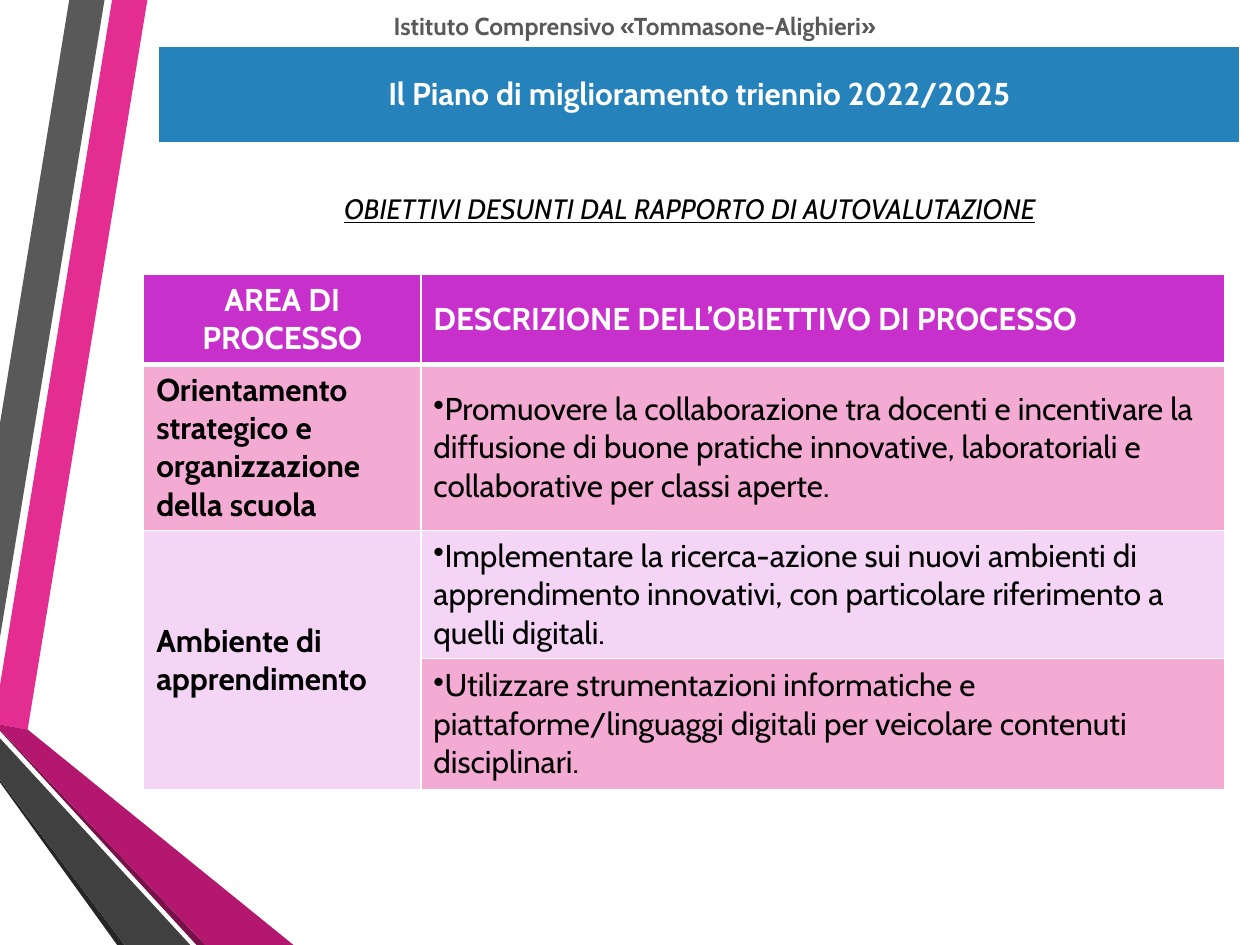
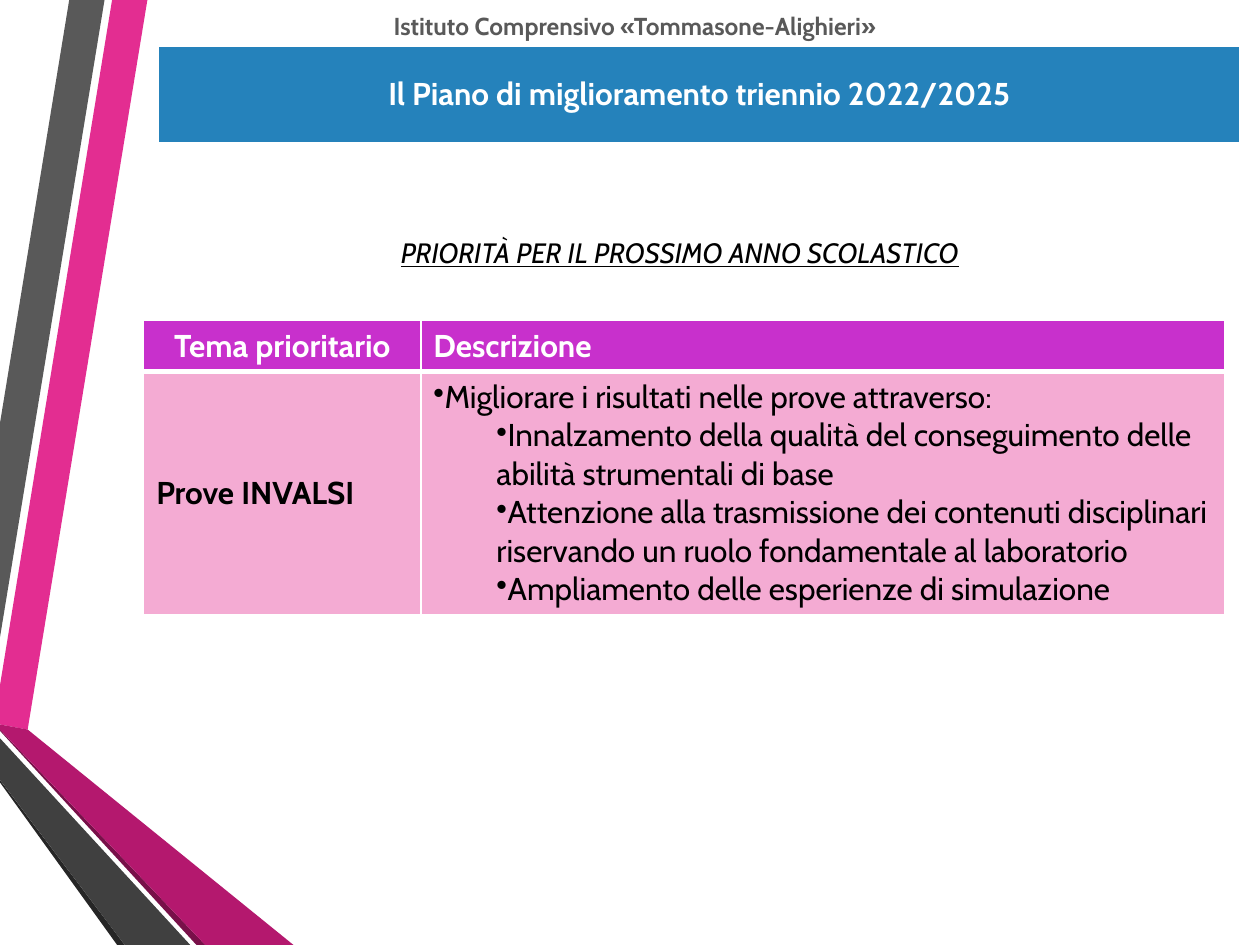
from lxml.etree import SubElement
from pptx import Presentation
from pptx.dml.color import RGBColor
from pptx.enum.text import MSO_ANCHOR as Anchor, PP_ALIGN as Align
from pptx.oxml.ns import qn
from pptx.util import Pt

PX = 9144
FONT = "Cabin"
COLORS = {
    "white": "FFFFFF", "black": "000000", "school": "595959", "banner": "2582BB",
    "header": "C830CC", "pink": "F4ABD3", "lilac": "F4D5F5",
}
RIBBONS = [
    ("E32D91", [(0, 544), (0, 575), (22, 579), (117, 0), (89, 0)]),
    ("595959", [(83, 0), (55, 0), (0, 336), (0, 506)]),
    ("262626", [(0, 619), (0, 621), (93, 750), (99, 750)]),
    ("781049", [(0, 579), (0, 580), (156, 750), (163, 750)]),
    ("B4186E", [(0, 579), (163, 750), (233, 750), (22, 579), (0, 575)]),
    ("404040", [(0, 619), (99, 750), (151, 750), (0, 586)]),
]
SCHOOL = "Istituto Comprensivo «Tommasone-Alighieri»"
PLAN = "Il Piano di miglioramento triennio 2022/2025"
SCHOOL_BOX = (114, 4, 780, 34)
BANNER_BOX = (126, 37, 858, 76)
COLUMNS = (220, 638)

PAGES = [
    {
        "heading": "OBIETTIVI DESUNTI DAL RAPPORTO DI AUTOVALUTAZIONE",
        "heading_box": (138, 147, 819, 37),
        "table_at": (114, 218),
        "heights": (69, 130, 101, 104),
        "header": ("AREA DI PROCESSO", "DESCRIZIONE DELL’OBIETTIVO DI PROCESSO"),
        "groups": [
            ("Orientamento strategico e organizzazione della scuola", [
                [(0, "Promuovere la collaborazione tra docenti e incentivare la diffusione di "
                     "buone pratiche innovative, laboratoriali e collaborative per classi aperte.")],
            ]),
            ("Ambiente di apprendimento", [
                [(0, "Implementare la ricerca-azione sui nuovi ambienti di apprendimento "
                     "innovativi, con particolare riferimento a quelli digitali.")],
                [(0, "Utilizzare strumentazioni informatiche e piattaforme/linguaggi digitali "
                     "per veicolare contenuti disciplinari.")],
            ]),
        ],
    },
    {
        "heading": "PRIORITÀ PER IL PROSSIMO ANNO SCOLASTICO",
        "heading_box": (130, 182, 819, 37),
        "table_at": (114, 254),
        "heights": (41, 190),
        "header": ("Tema prioritario", "Descrizione"),
        "groups": [
            ("Prove INVALSI", [[
                (0, "Migliorare i risultati nelle prove attraverso:"),
                (1, "Innalzamento della qualità del conseguimento delle abilità strumentali di base"),
                (1, "Attenzione alla trasmissione dei contenuti disciplinari riservando un ruolo "
                    "fondamentale al laboratorio"),
                (1, "Ampliamento delle esperienze di simulazione"),
            ]]),
        ],
    },
]


def rgb(name):
    """Return the colour of a name in the palette, or of a hex string."""
    return RGBColor.from_string(COLORS.get(name, name))


def px(lengths):
    """Turn whole pixels into EMU."""
    return [length * PX for length in lengths]


def write(para, text, size, color, align=Align.LEFT, **style):
    """Add one formatted run to a paragraph."""
    para.alignment = align
    span = para.add_run()
    span.text = text
    span.font.name, span.font.size = FONT, Pt(size)
    span.font.color.rgb = rgb(color)
    for name, value in style.items():
        setattr(span.font, name, value)


def write_bullets(frame, items):
    """Fill a cell with bulleted paragraphs, indented by level."""
    for number, (level, text) in enumerate(items):
        para = frame.add_paragraph() if number else frame.paragraphs[0]
        para.level = level
        props = para._p.get_or_add_pPr()
        props.set("marL", str(level * 50 * PX))
        props.set("indent", "0")
        SubElement(props, qn("a:buChar"), char="•")
        write(para, text, 18, "black", bold=False)


def style_cell(cell, fill, top=1, bottom=1):
    """Give a cell its white rules, fill and middle anchor."""
    props = cell._tc.get_or_add_tcPr()
    for side, width in (("L", 1), ("R", 1), ("T", top), ("B", bottom)):
        line = SubElement(props, qn(f"a:ln{side}"), w=str(Pt(width)))
        paint = SubElement(line, qn("a:solidFill"))
        SubElement(paint, qn("a:srgbClr"), val=COLORS["white"])
    cell.fill.solid()
    cell.fill.fore_color.rgb = rgb(fill)
    cell.vertical_anchor = Anchor.MIDDLE


def add_grid(page, left, top, widths, heights):
    """Add an unbanded table with the given columns and rows."""
    box = px((left, top, sum(widths), sum(heights)))
    table = page.shapes.add_table(len(heights), len(widths), *box).table
    table.first_row = table.horz_banding = False
    for column, width in zip(table.columns, px(widths)):
        column.width = width
    for row, height in zip(table.rows, px(heights)):
        row.height = height
    return table


def add_ribbons(page, layout):
    """Draw the folded ribbons and place them in the shared layout."""
    for number, (color, points) in enumerate(RIBBONS):
        builder = page.shapes.build_freeform(*points[0], scale=PX)
        builder.add_line_segments(points[1:], close=True)
        ribbon = builder.convert_to_shape()
        ribbon.shadow.inherit = False
        ribbon.fill.solid()
        ribbon.fill.fore_color.rgb = rgb(color)
        ribbon.line.fill.background()
        ribbon.element.nvSpPr.cNvPr.id = 20 + number
        layout.shapes.element.append(ribbon.element)


def add_heading(page, text, box):
    """Move and format the title placeholder."""
    title = page.shapes.title
    title.left, title.top, title.width, title.height = px(box)
    title.text_frame.word_wrap = True
    write(title.text_frame.paragraphs[0], text, 16, "black", Align.CENTER,
          italic=True, underline=True)


def add_school(page, box):
    """Add the school name above the banner."""
    frame = page.shapes.add_textbox(*px(box)).text_frame
    frame.word_wrap = True
    write(frame.paragraphs[0], SCHOOL, 14, "school", Align.CENTER, bold=True)


def add_banner(page, box):
    """Add the blue one-cell band with the plan's name."""
    left, top, width, height = box
    cell = add_grid(page, left, top, (width,), (height,)).cell(0, 0)
    cell.fill.solid()
    cell.fill.fore_color.rgb = rgb("banner")
    cell.vertical_anchor = Anchor.MIDDLE
    write(cell.text_frame.paragraphs[0], PLAN, 18, "white", Align.CENTER, bold=True)


def add_goals(page, content):
    """Add the table of areas and their goals."""
    table = add_grid(page, *content["table_at"], COLUMNS, content["heights"])
    for column, align in enumerate((Align.CENTER, Align.LEFT)):
        cell = table.cell(0, column)
        style_cell(cell, "header", bottom=3)
        write(cell.text_frame.paragraphs[0], content["header"][column], 18, "white",
              align, bold=True)
    row = 1
    for area, goals in content["groups"]:
        first = row
        area_fill = "pink" if first % 2 else "lilac"
        for goal in goals:
            top = 3 if row == 1 else 1
            style_cell(table.cell(row, 0), area_fill, top)
            style_cell(table.cell(row, 1), "pink" if row % 2 else "lilac", top)
            write_bullets(table.cell(row, 1).text_frame, goal)
            row += 1
        cell = table.cell(first, 0)
        if len(goals) > 1:
            cell.merge(table.cell(row - 1, 0))
        write(cell.text_frame.paragraphs[0], area, 18, "black", bold=True)


def main():
    """Build and save the deck."""
    deck = Presentation()
    deck.slide_width, deck.slide_height = px((1000, 750))
    layout = deck.slide_layouts[5]
    for number, content in enumerate(PAGES):
        page = deck.slides.add_slide(layout)
        if number == 0:
            add_ribbons(page, layout)
        add_heading(page, content["heading"], content["heading_box"])
        add_goals(page, content)
        add_school(page, SCHOOL_BOX)
        add_banner(page, BANNER_BOX)
    deck.save("out.pptx")


if __name__ == "__main__":
    main()
